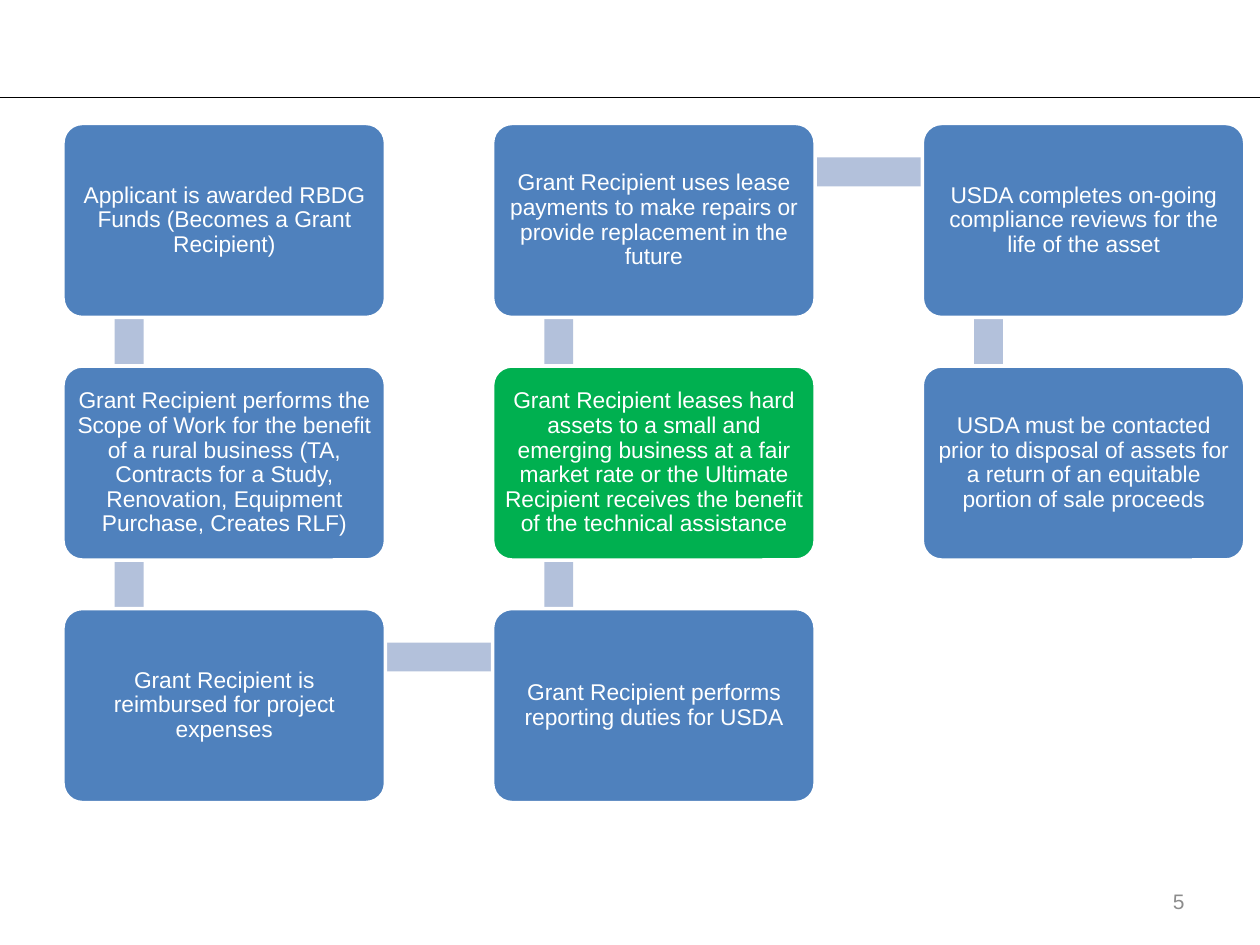
from dataclasses import dataclass

from lxml import etree
from pptx import Presentation
from pptx.dml.color import RGBColor
from pptx.enum.shapes import MSO_CONNECTOR, MSO_SHAPE
from pptx.enum.text import MSO_ANCHOR, PP_ALIGN
from pptx.oxml.ns import qn
from pptx.util import Inches, Pt

ROUND, RECT = MSO_SHAPE.ROUNDED_RECTANGLE, MSO_SHAPE.RECTANGLE
LINE = MSO_CONNECTOR.STRAIGHT
MID = MSO_ANCHOR.MIDDLE
CENTER, RIGHT = PP_ALIGN.CENTER, PP_ALIGN.RIGHT


@dataclass(frozen=True)
class Theme:
    font: str = "Arial"
    blue: RGBColor = RGBColor(0x4F, 0x81, 0xBD)
    green: RGBColor = RGBColor(0x00, 0xB0, 0x50)
    bar: RGBColor = RGBColor(0xB3, 0xC1, 0xDB)
    white: RGBColor = RGBColor(0xFF, 0xFF, 0xFF)
    black: RGBColor = RGBColor(0, 0, 0)
    gray: RGBColor = RGBColor(0x8C, 0x8C, 0x8C)
    body: Pt = Pt(13)
    small: Pt = Pt(12)
    edge: Pt = Pt(2)
    rule: Pt = Pt(0.5)


@dataclass(frozen=True)
class Step:
    text: str
    fill: RGBColor


THEME = Theme()

# Grid: columns run down, then up, then down again
ROWS = 3
LEFT, TOP = 0.5, 0.98
STEP_X, STEP_Y = 3.41, 1.925
BOX_W, BOX_H = 2.56, 1.54
BAR = 0.23

STEPS = [
    Step("Applicant is awarded RBDG Funds (Becomes a Grant Recipient)", THEME.blue),
    Step("Grant Recipient performs the Scope of Work for the benefit of a rural "
         "business (TA, Contracts for a Study, Renovation, Equipment Purchase, "
         "Creates RLF)", THEME.blue),
    Step("Grant Recipient is reimbursed for project expenses", THEME.blue),
    Step("Grant Recipient performs reporting duties for USDA", THEME.blue),
    Step("Grant Recipient leases hard assets to a small and emerging business at "
         "a fair market rate or the Ultimate Recipient receives the benefit of "
         "the technical assistance", THEME.green),
    Step("Grant Recipient uses lease payments to make repairs or provide "
         "replacement in the future", THEME.blue),
    Step("USDA completes on-going compliance reviews for the life of the asset",
         THEME.blue),
    Step("USDA must be contacted prior to disposal of assets for a return of an "
         "equitable portion of sale proceeds", THEME.blue),
]


def cell(index: int) -> tuple[int, int]:
    """Column and row of a step on the winding route."""
    col, row = divmod(index, ROWS)
    return col, ROWS - 1 - row if col % 2 else row


def spot(col: int, row: int) -> tuple[float, float]:
    return LEFT + col * STEP_X, TOP + row * STEP_Y


def write(frame, text: str, align, size: Pt, color: RGBColor) -> None:
    frame.word_wrap = True
    frame.vertical_anchor = MID
    para = frame.paragraphs[0]
    para.text = text
    para.alignment = align
    style = {"name": THEME.font, "size": size}
    for key, value in style.items():
        setattr(para.font, key, value)
    para.font.color.rgb = color


def draw_bar(slide, index: int) -> None:
    """Bar from one step to the next, turned when both share a column."""
    (col, row), (next_col, next_row) = cell(index), cell(index + 1)
    x, y = spot(col, min(row, next_row))
    if col == next_col:
        left, top, width = x - 0.43, y + 1.23, 1.91
        turn = 90 if next_row > row else 270
    else:
        left, top, width, turn = x + 0.53, y + 0.27, 3.4, 0
    bar = slide.shapes.add_shape(
        RECT, Inches(left), Inches(top), Inches(width), Inches(BAR))
    bar.rotation = turn
    bar.shadow.inherit = False
    bar.fill.solid()
    bar.fill.fore_color.rgb = THEME.bar
    bar.line.fill.background()


def draw_box(slide, index: int, step: Step) -> None:
    x, y = spot(*cell(index))
    box = slide.shapes.add_shape(
        ROUND, Inches(x), Inches(y), Inches(BOX_W), Inches(BOX_H))
    box.adjustments[0] = 0.1
    box.shadow.inherit = False
    box.fill.solid()
    box.fill.fore_color.rgb = step.fill
    box.line.color.rgb = THEME.white
    box.line.width = THEME.edge
    frame = box.text_frame
    for side in ("left", "top", "right", "bottom"):
        setattr(frame, f"margin_{side}", Inches(0.05))
    write(frame, step.text, CENTER, THEME.body, THEME.white)
    frame.paragraphs[0].line_spacing = 0.9


def draw_rule(slide) -> None:
    y = Inches(0.77)
    rule = slide.shapes.add_connector(LINE, Inches(0), y, Inches(10), y)
    rule.line.color.rgb = THEME.black
    rule.line.width = THEME.rule
    etree.SubElement(rule._element.spPr, qn("a:effectLst"))


def main() -> None:
    deck = Presentation()
    deck.slide_width, deck.slide_height = Inches(10), Inches(7.5)
    slide = deck.slides.add_slide(deck.slide_layouts[6])

    # Header rule and page number
    draw_rule(slide)
    page = slide.shapes.add_textbox(
        Inches(7.17), Inches(6.95), Inches(2.33), Inches(0.4))
    write(page.text_frame, "5", RIGHT, THEME.small, THEME.gray)

    # Process route: each bar lies under the boxes it joins
    for index, step in enumerate(STEPS):
        if index < len(STEPS) - 1:
            draw_bar(slide, index)
        draw_box(slide, index, step)

    deck.save("out.pptx")


if __name__ == "__main__":
    main()
